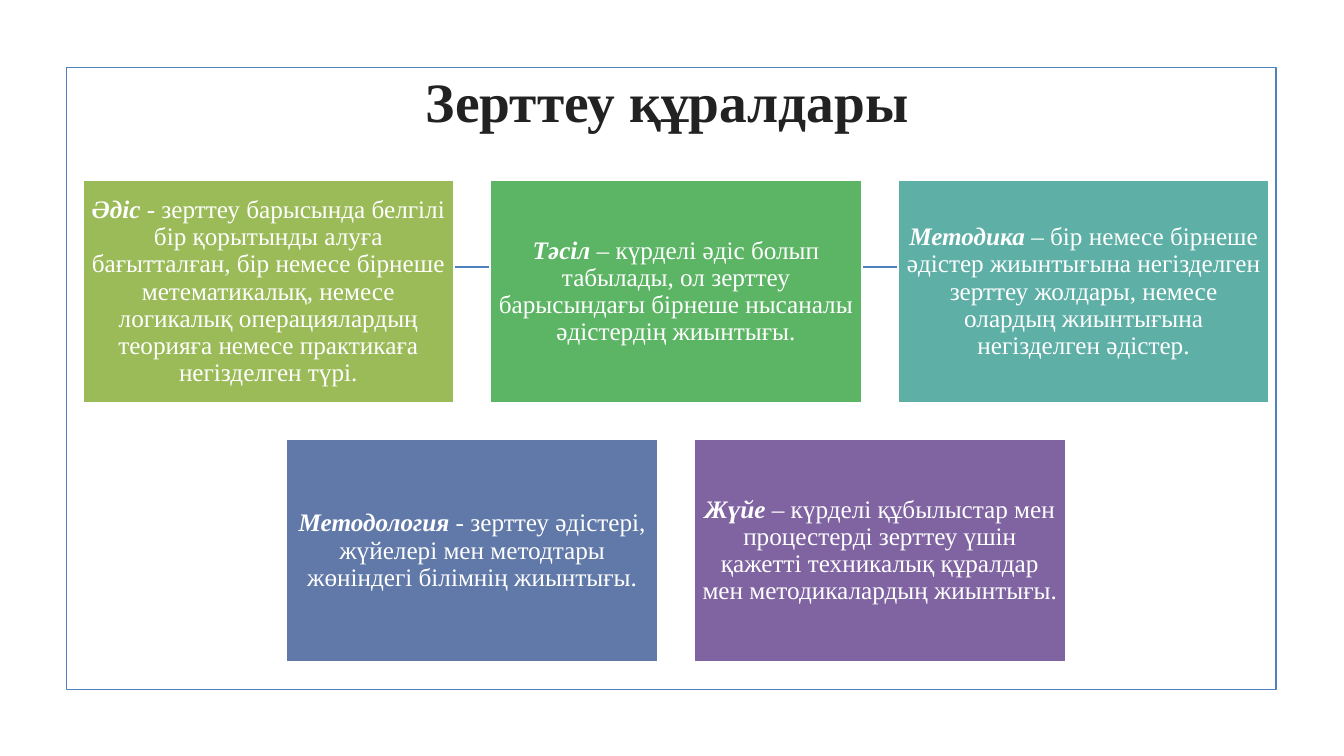
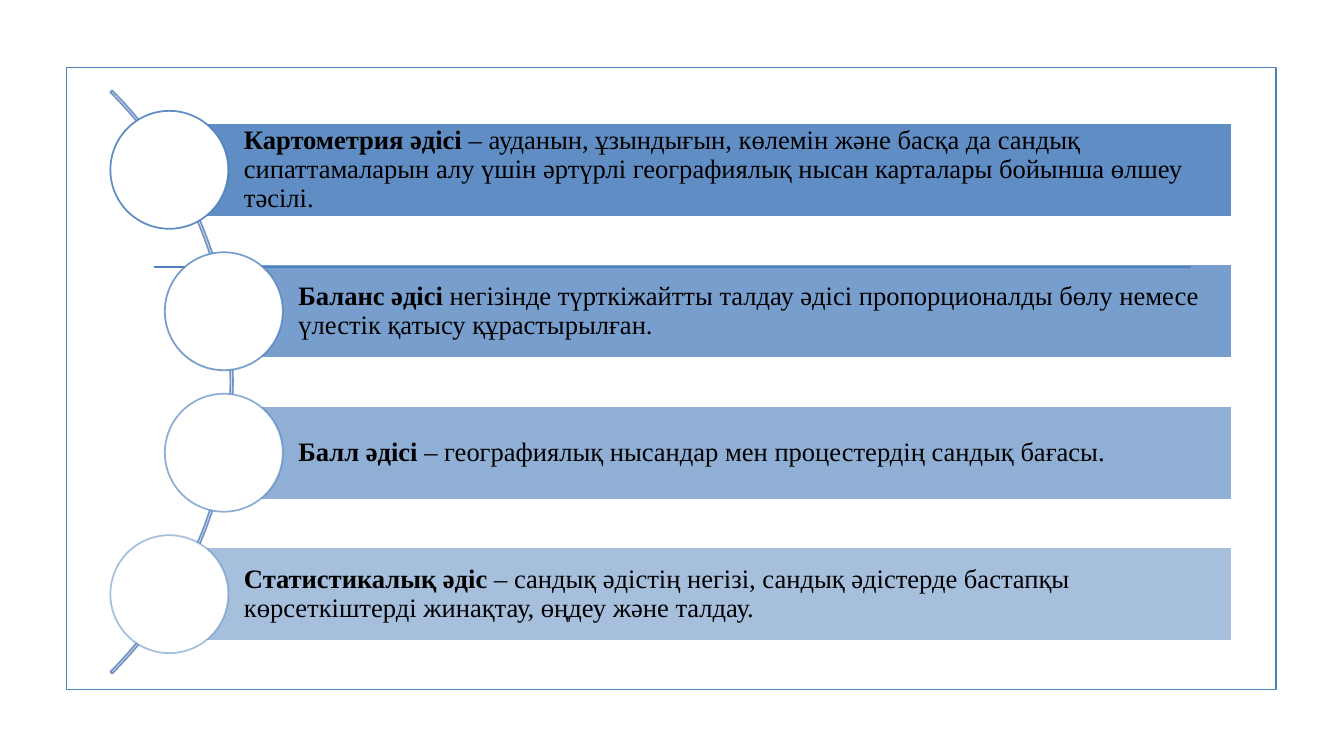
from lxml import etree
from pptx import Presentation
from pptx.dml.color import RGBColor
from pptx.enum.shapes import MSO_CONNECTOR, MSO_SHAPE
from pptx.enum.text import MSO_ANCHOR, MSO_AUTO_SIZE, PP_ALIGN
from pptx.oxml.ns import qn
from pptx.util import Inches, Pt

RECT, CIRCLE, ARC = MSO_SHAPE.RECTANGLE, MSO_SHAPE.OVAL, MSO_SHAPE.BLOCK_ARC
STRAIGHT = MSO_CONNECTOR.STRAIGHT
MIDDLE, NO_FIT = MSO_ANCHOR.MIDDLE, MSO_AUTO_SIZE.NONE
CENTER, LEFT = PP_ALIGN.CENTER, PP_ALIGN.LEFT

FONT = "Times New Roman"
BLUE, ARC_BLUE, WHITE, BLACK, INK = "4F81BD", "7394C5", "FFFFFF", "000000", "222222"
LINE_WIDTH = Pt(1.25)
TITLE_ONLY, BLANK = 5, 6

TOOLS = [
    ("9BBB59", "Әдіс", " - зерттеу барысында белгілі бір қорытынды алуға бағытталған, "
     "бір немесе бірнеше метематикалық, немесе логикалық операциялардың "
     "теорияға немесе практикаға негізделген түрі."),
    ("5CB565", "Тәсіл", " – күрделі әдіс болып табылады, ол зерттеу барысындағы "
     "бірнеше нысаналы әдістердің жиынтығы."),
    ("5EAFA6", "Методика", " – бір немесе бірнеше әдістер жиынтығына негізделген "
     "зерттеу жолдары, немесе олардың жиынтығына негізделген әдістер."),
    ("6179A8", "Методология", " - зерттеу әдістері, жүйелері мен методтары "
     "жөніндегі білімнің жиынтығы."),
    ("8064A2", "Жүйе", " – күрделі құбылыстар мен процестерді зерттеу үшін қажетті "
     "техникалық құралдар мен методикалардың жиынтығы."),
]

METHODS = [
    (1.68, "Картометрия әдісі", " – ауданын, ұзындығын, көлемін және басқа да сандық "
     "сипаттамаларын алу үшін әртүрлі географиялық нысан карталары бойынша өлшеу тәсілі."),
    (2.22, "Баланс әдісі", " негізінде түрткіжайтты талдау әдісі пропорционалды бөлу "
     "немесе үлестік қатысу құрастырылған."),
    (2.22, "Балл әдісі", " – географиялық нысандар мен процестердің сандық бағасы."),
    (1.68, "Статистикалық әдіс", " – сандық әдістің негізі, сандық әдістерде бастапқы "
     "көрсеткіштерді жинақтау, өңдеу және талдау."),
]


def paint(color_format, hex_color, opacity=100):
    """Set a solid fill to a hex colour with an opacity in percent."""
    color_format.solid()
    color_format.fore_color.rgb = RGBColor.from_string(hex_color)
    if opacity < 100:
        target = color_format._xPr.find(qn("a:solidFill"))[0]
        etree.SubElement(target, qn("a:alpha"), val=str(round(opacity * 1000)))


def add_outlined(slide, preset, box, fill, line, fill_opacity=100, line_opacity=100):
    """Add a preset shape with its fill and outline."""
    shape = slide.shapes.add_shape(preset, *map(Inches, box))
    shape.shadow.inherit = False
    if fill:
        paint(shape.fill, fill, fill_opacity)
    else:
        shape.fill.background()
    paint(shape.line.fill, line, line_opacity)
    shape.line.width = LINE_WIDTH
    return shape


def add_run(paragraph, text, size, color, bold=False, italic=False):
    """Add one formatted run to a paragraph."""
    run = paragraph.add_run()
    run.text = text
    run.font.name = FONT
    run.font.size = Pt(size)
    run.font.bold = bold
    run.font.italic = italic
    paint(run.font.fill, color)


def write_definition(shape, term, meaning, size, color, align, insets, italic=False):
    """Write an emphasised term and its meaning into a shape."""
    frame = shape.text_frame
    frame.word_wrap = True
    frame.vertical_anchor = MIDDLE
    frame.margin_left, frame.margin_top, frame.margin_right, frame.margin_bottom = map(Inches, insets)
    paragraph = frame.paragraphs[0]
    paragraph.alignment = align
    paragraph.line_spacing = 0.9
    add_run(paragraph, term, size, color, bold=True, italic=italic)
    add_run(paragraph, meaning, size, color)


def add_framed_slide(prs, layout):
    """Add a slide with the shared border and rule."""
    slide = prs.slides.add_slide(prs.slide_layouts[layout])
    add_outlined(slide, RECT, (0.66, 0.67, 12, 6.17), None, BLUE)
    rule = slide.shapes.add_connector(STRAIGHT, *map(Inches, (1.53, 2.65, 11.81, 2.65)))
    paint(rule.line.fill, BLUE)
    rule.line.width = LINE_WIDTH
    etree.SubElement(rule._element.spPr, qn("a:effectLst"))
    return slide


def set_title(slide, text, box):
    """Place and write the title placeholder."""
    title = slide.shapes.title
    title.left, title.top, title.width, title.height = map(Inches, box)
    frame = title.text_frame
    frame.auto_size = NO_FIT
    frame.vertical_anchor = MIDDLE
    frame.paragraphs[0].alignment = CENTER
    add_run(frame.paragraphs[0], text, 39.6, INK, bold=True)


def add_card_grid(slide, tools, box, columns=3, gap=0.36):
    """Fill a box with rows of cards, centring a short last row."""
    left, top, width, height = box
    rows = [tools[i:i + columns] for i in range(0, len(tools), columns)]
    card_width = (width - gap * (columns - 1)) / columns
    card_height = (height - gap * (len(rows) - 1)) / len(rows)
    for row_index, row in enumerate(rows):
        indent = (columns - len(row)) * (card_width + gap) / 2
        y = top + row_index * (card_height + gap)
        for column, (color, term, meaning) in enumerate(row):
            x = left + indent + column * (card_width + gap)
            card = add_outlined(slide, RECT, (x, y, card_width, card_height), color, WHITE)
            write_definition(card, term, meaning, 18, WHITE, CENTER, [0.07] * 4, italic=True)


def add_method_arc(slide, methods, box):
    """Draw bars with circles along a curve inside a box."""
    left, top, width, height = box
    diameter, bar_height, circle_size = 8.18, 0.93, 1.17
    curve_box = (left - 6.97, top + height / 2 - diameter / 2, diameter, diameter)
    curve = add_outlined(slide, ARC, curve_box, None, ARC_BLUE)
    for index, value in enumerate((189, 27, 0.003)):
        curve.adjustments[index] = value
    steps = len(methods) - 1
    pitch = (height - circle_size) / steps
    for index, (x, term, meaning) in enumerate(methods):
        opacity = 90 - 40 * index / steps
        middle = top + circle_size / 2 + index * pitch
        bar_box = (x, middle - bar_height / 2, left + width - x, bar_height)
        bar = add_outlined(slide, RECT, bar_box, BLUE, WHITE, fill_opacity=opacity)
        write_definition(bar, term, meaning, 19, BLACK, LEFT, (0.74, 0.05, 0.05, 0.05))
        circle_box = (x - circle_size / 2, middle - circle_size / 2, circle_size, circle_size)
        add_outlined(slide, CIRCLE, circle_box, WHITE, BLUE, line_opacity=opacity)


def build_tools_slide(prs):
    """Build the slide of research tools."""
    slide = add_framed_slide(prs, TITLE_ONLY)
    set_title(slide, "Зерттеу құралдары", (1.37, 0.69, 10.5, 0.61))
    add_card_grid(slide, TOOLS, (0.82, 1.79, 11.77, 4.78))


def build_methods_slide(prs):
    """Build the slide of quantitative methods."""
    slide = add_framed_slide(prs, BLANK)
    add_method_arc(slide, METHODS, (1.1, 1.1, 11.12, 5.38))


def main():
    """Build and save the presentation."""
    prs = Presentation()
    prs.slide_width, prs.slide_height = Inches(13.33), Inches(7.5)
    build_tools_slide(prs)
    build_methods_slide(prs)
    prs.save("out.pptx")


if __name__ == "__main__":
    main()
